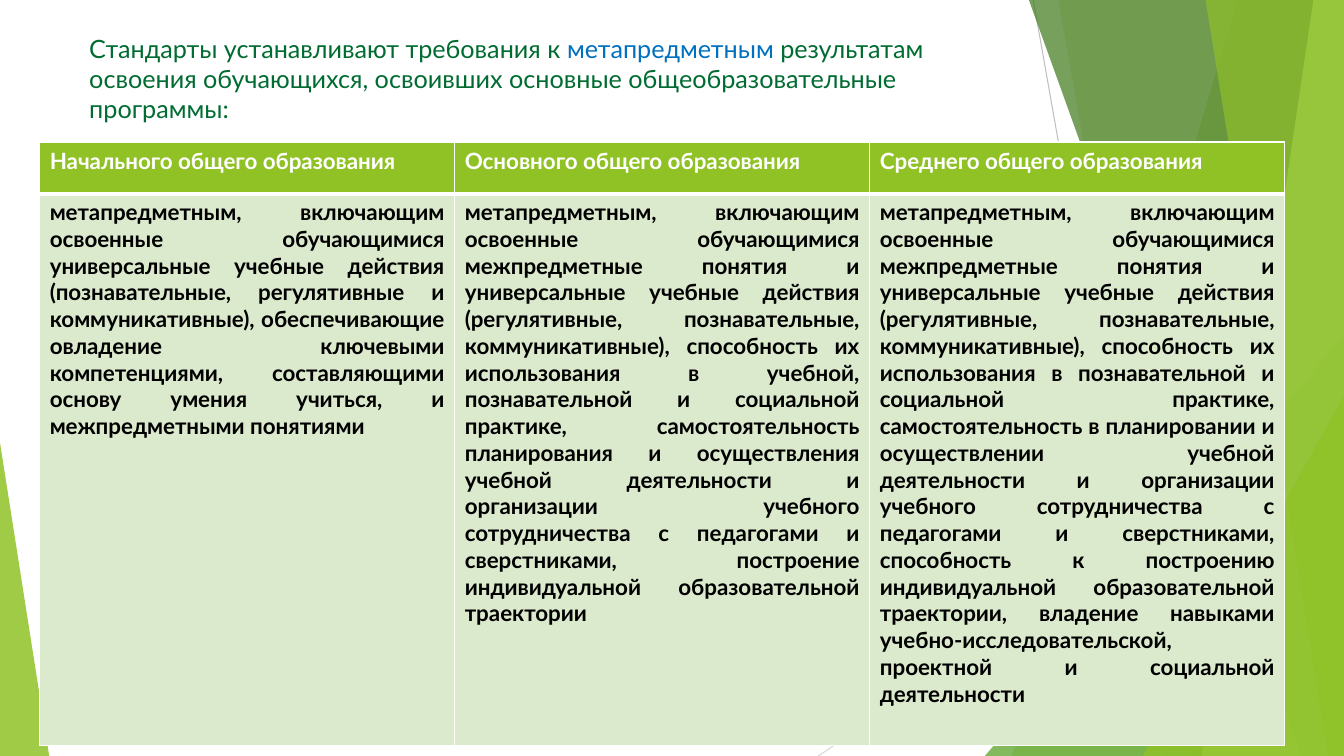
from lxml import etree
from pptx import Presentation
from pptx.dml.color import RGBColor
from pptx.enum.shapes import MSO_CONNECTOR, MSO_SHAPE
from pptx.enum.text import PP_ALIGN
from pptx.oxml.ns import qn
from pptx.util import Cm, Pt

STRAIGHT = MSO_CONNECTOR.STRAIGHT
TRIANGLE = MSO_SHAPE.ISOSCELES_TRIANGLE
LEFT = PP_ALIGN.LEFT
JUSTIFY = PP_ALIGN.JUSTIFY

FONT = "Lato"
WIDTH, HEIGHT = 33.87, 19.05
COLORS = {
    "white": "FFFFFF",
    "black": "000000",
    "title": "006C31",
    "accent": "0070C0",
    "lime": "90C226",
    "green": "54A021",
    "forest": "3F7819",
    "pale": "C0E474",
    "cell": "DBE9CD",
    "gray": "BFBFBF",
    "silver": "D9D9D9",
}
TITLE = [
    ("Стандарты устанавливают требования к ", "title"),
    ("метапредметным", "accent"),
    (" результатам освоения обучающихся, освоивших основные "
     "общеобразовательные программы:", "title"),
]
STANDARDS = [
    ("Начального общего образования",
     "метапредметным, включающим освоенные обучающимися универсальные учебные "
     "действия (познавательные, регулятивные и коммуникативные), обеспечивающие "
     "овладение ключевыми компетенциями, составляющими основу умения учиться, "
     "и межпредметными понятиями"),
    ("Основного общего образования",
     "метапредметным, включающим освоенные обучающимися межпредметные понятия и "
     "универсальные учебные действия (регулятивные, познавательные, "
     "коммуникативные), способность их использования в учебной, познавательной "
     "и социальной практике, самостоятельность планирования и осуществления "
     "учебной деятельности и организации учебного сотрудничества с педагогами и "
     "сверстниками, построение индивидуальной образовательной траектории"),
    ("Среднего общего образования",
     "метапредметным, включающим освоенные обучающимися межпредметные понятия и "
     "универсальные учебные действия (регулятивные, познавательные, "
     "коммуникативные), способность их использования в познавательной и "
     "социальной практике, самостоятельность в планировании и осуществлении "
     "учебной деятельности и организации учебного сотрудничества с педагогами и "
     "сверстниками, способность к построению индивидуальной образовательной "
     "траектории, владение навыками учебно-исследовательской, проектной и "
     "социальной деятельности"),
]


def rgb(name):
    """Return the named colour."""
    return RGBColor.from_string(COLORS[name])


def paint(shape, color, opacity):
    """Fill a shape with a translucent colour, without outline or shadow."""
    shape.shadow.inherit = False
    shape.line.fill.background()
    shape.fill.solid()
    shape.fill.fore_color.rgb = rgb(color)
    tint = next(shape._element.spPr.iter(qn("a:srgbClr")))
    etree.SubElement(tint, qn("a:alpha"), val=str(opacity * 1000))


def add_thin_line(page, start, end, color):
    """Draw a thin straight line between two points."""
    line = page.shapes.add_connector(STRAIGHT, *map(Cm, start + end))
    line.line.color.rgb = rgb(color)
    line.line.width = Pt(0.75)
    etree.SubElement(line._element.spPr, qn("a:effectLst"))


def add_band(page, top_x, bottom_x, color, opacity):
    """Draw a slanted full-height band reaching the right edge."""
    builder = page.shapes.build_freeform(Cm(top_x), Cm(0))
    corners = [(WIDTH, 0), (WIDTH, HEIGHT), (bottom_x, HEIGHT)]
    builder.add_line_segments([(Cm(x), Cm(y)) for x, y in corners])
    paint(builder.convert_to_shape(), color, opacity)


def add_triangle(page, left, top, width, apex, color, opacity):
    """Draw a triangle standing on the bottom edge."""
    triangle = page.shapes.add_shape(
        TRIANGLE, Cm(left), Cm(top), Cm(width), Cm(HEIGHT - top))
    triangle.adjustments[0] = apex
    paint(triangle, color, opacity)


def add_decoration(page):
    """Draw the layered green facets from back to front."""
    add_thin_line(page, (26.04, 0), (29.41, HEIGHT), "gray")
    add_thin_line(page, (WIDTH, 10.24), (20.62, HEIGHT), "silver")
    add_band(page, 31.19, 25.5, "lime", 30)
    add_band(page, 26.67, 30.05, "lime", 20)
    add_triangle(page, 24.82, 8.46, 9.05, 1, "green", 72)
    add_band(page, 25.93, 32.79, "forest", 70)
    add_band(page, 33.1, 30.28, "pale", 70)
    add_band(page, 30.38, 33.48, "lime", 65)
    add_triangle(page, 28.8, 9.98, 5.07, 1, "lime", 80)
    add_triangle(page, 0, 11.15, 1.24, 0, "lime", 85)


def add_title(page):
    """Write the heading with its highlighted word."""
    box = page.shapes.add_textbox(Cm(2), Cm(0.71), Cm(23.75), Cm(1.83))
    box.text_frame.word_wrap = True
    para = box.text_frame.paragraphs[0]
    para.font.size = Pt(18)
    para.font.name = FONT
    for text, color in TITLE:
        span = para.add_run()
        span.text = text
        span.font.color.rgb = rgb(color)


def set_borders(cell, top, bottom):
    """Give a cell white borders, with top and bottom widths in points."""
    properties = cell._tc.get_or_add_tcPr()
    widths = {"a:lnL": 1, "a:lnR": 1, "a:lnT": top, "a:lnB": bottom}
    for index, (tag, width) in enumerate(widths.items()):
        border = etree.Element(qn(tag), w=str(Pt(width)))
        fill = etree.SubElement(border, qn("a:solidFill"))
        etree.SubElement(fill, qn("a:srgbClr"), val=COLORS["white"])
        properties.insert(index, border)


def fill_cell(cell, text, fill, color, align):
    """Write bold text into a coloured cell."""
    cell.fill.solid()
    cell.fill.fore_color.rgb = rgb(fill)
    cell.text = text
    para = cell.text_frame.paragraphs[0]
    para.alignment = align
    para.font.name = FONT
    para.font.size = Pt(16)
    para.font.bold = True
    para.font.color.rgb = rgb(color)


def add_standards_table(page):
    """Build the table with one column per education level."""
    frame = page.shapes.add_table(
        2, len(STANDARDS), Cm(1), Cm(3.58), Cm(31.38), Cm(15.2))
    table = frame.table
    table.rows[0].height = Cm(1.3)
    table.rows[1].height = Cm(13.9)
    for index, (level, requirement) in enumerate(STANDARDS):
        table.columns[index].width = Cm(10.46)
        header, body = table.cell(0, index), table.cell(1, index)
        fill_cell(header, level, "lime", "white", LEFT)
        set_borders(header, 1, 3)
        fill_cell(body, requirement, "cell", "black", JUSTIFY)
        set_borders(body, 3, 1)


def main():
    """Build and save the slide."""
    deck = Presentation()
    deck.slide_width = Cm(WIDTH)
    deck.slide_height = Cm(HEIGHT)
    page = deck.slides.add_slide(deck.slide_layouts[6])
    add_decoration(page)
    add_title(page)
    add_standards_table(page)
    deck.save("out.pptx")


if __name__ == "__main__":
    main()
